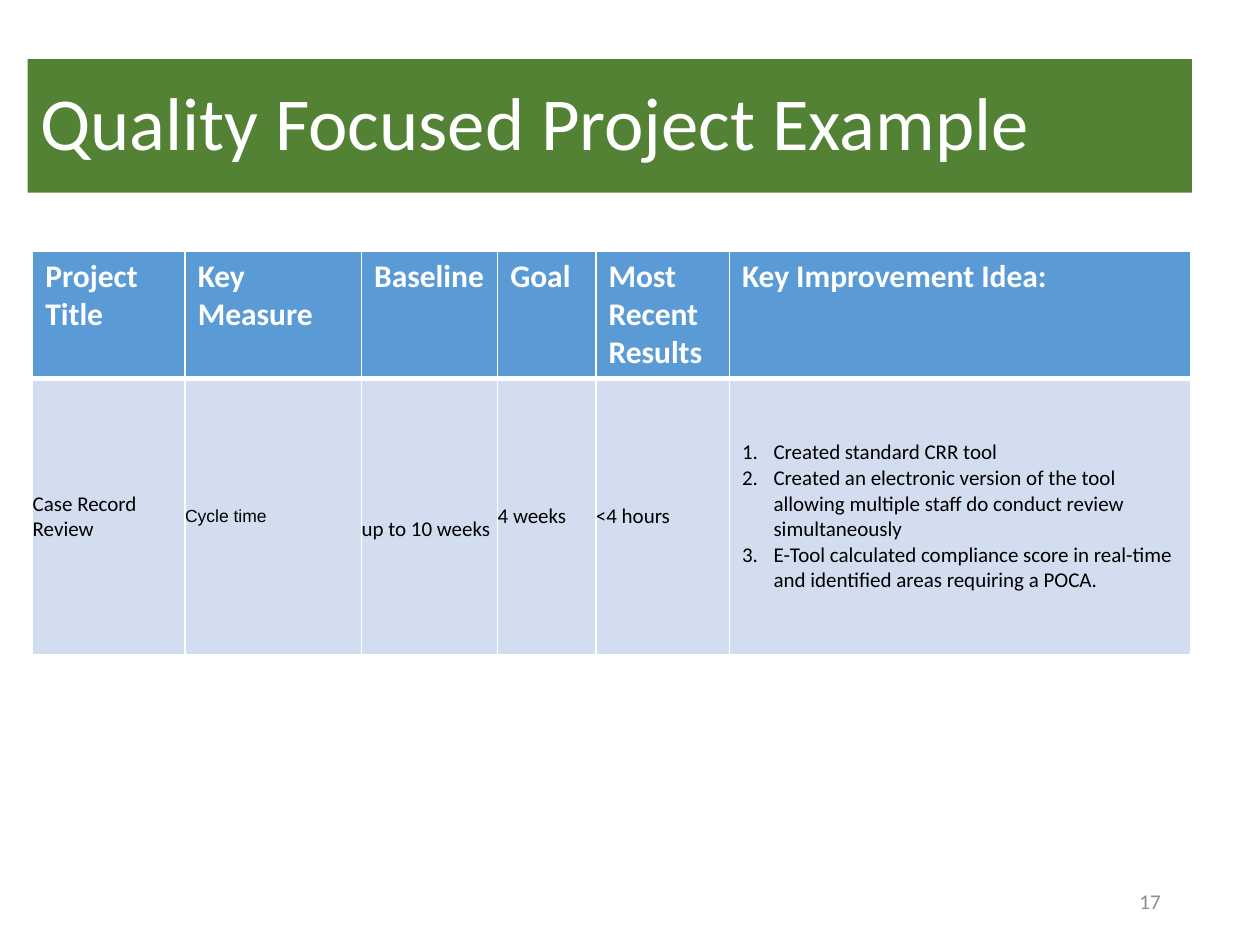
from lxml.etree import SubElement
from pptx import Presentation
from pptx.dml.color import RGBColor
from pptx.enum.text import MSO_ANCHOR, MSO_AUTO_SIZE, PP_ALIGN
from pptx.oxml.ns import qn
from pptx.util import Inches, Pt

GREEN = RGBColor(0x54, 0x82, 0x35)
BLUE = RGBColor(0x5B, 0x9B, 0xD5)
PALE_BLUE = RGBColor(0xD2, 0xDE, 0xEF)
GRAY = RGBColor(0x8C, 0x8C, 0x8C)
WHITE = RGBColor(0xFF, 0xFF, 0xFF)
BLACK = RGBColor(0, 0, 0)

COLUMN_WIDTHS = [1.21, 1.4, 1.08, 0.78, 1.06, 3.66]
ROW_HEIGHTS = [1, 2.19]
HEADERS = ["Project Title", "Key Measure", "Baseline", "Goal",
           "Most Recent Results", "Key Improvement Idea:"]
IDEAS = [
    "Created standard CRR tool",
    "Created an electronic version of the tool allowing multiple staff do conduct review simultaneously",
    "E-Tool calculated compliance score in real-time and identified areas requiring a POCA.",
]
PROJECT = ["Case Record Review", "Cycle time", "up to 10 weeks", "4 weeks",
           "<4 hours", "\n".join(IDEAS)]


def format_text(frame, size, color, bold=False, font="Calibri"):
    for para in frame.paragraphs:
        for span in para.runs:
            span.font.name = font
            span.font.size = Pt(size)
            span.font.bold = bold
            span.font.color.rgb = color


def add_border(cell, side, width):
    line = SubElement(cell._tc.get_or_add_tcPr(), qn(f"a:ln{side}"), w=str(Pt(width)))
    fill = SubElement(line, qn("a:solidFill"))
    SubElement(fill, qn("a:srgbClr"), val=str(WHITE))


deck = Presentation()
deck.slide_width, deck.slide_height = Inches(10), Inches(7.5)
page = deck.slides.add_slide(deck.slide_layouts[5])

title = page.shapes.title
title.left, title.top = Inches(0.22), Inches(0.47)
title.width, title.height = Inches(9.24), Inches(1.06)
title.fill.solid()
title.fill.fore_color.rgb = GREEN
title.text_frame.text = "Quality Focused Project Example"
title.text_frame.auto_size = MSO_AUTO_SIZE.NONE
title.text_frame.vertical_anchor = MSO_ANCHOR.MIDDLE
title.text_frame.paragraphs[0].alignment = PP_ALIGN.LEFT
title.text_frame.paragraphs[0].line_spacing = 0.9
format_text(title.text_frame, 42.7, WHITE)

table = page.shapes.add_table(
    len(ROW_HEIGHTS), len(COLUMN_WIDTHS), Inches(0.26), Inches(1.99),
    Inches(sum(COLUMN_WIDTHS)), Inches(sum(ROW_HEIGHTS))).table
for column, width in zip(table.columns, COLUMN_WIDTHS):
    column.width = Inches(width)
for row, height in zip(table.rows, ROW_HEIGHTS):
    row.height = Inches(height)

for row_index, texts in enumerate([HEADERS, PROJECT]):
    is_header = row_index == 0
    for column_index, text in enumerate(texts):
        cell = table.cell(row_index, column_index)
        cell.text_frame.text = text
        for side in "LRTB":
            add_border(cell, side, 3 if side == ("B" if is_header else "T") else 1)
        cell.fill.solid()
        cell.fill.fore_color.rgb = BLUE if is_header else PALE_BLUE
        if is_header:
            format_text(cell.text_frame, 18, WHITE, bold=True)
            continue
        cell.vertical_anchor = MSO_ANCHOR.MIDDLE
        format_text(cell.text_frame, 12, BLACK)
        if column_index < len(texts) - 1:
            cell.margin_left = cell.margin_right = 0
            cell.margin_top = cell.margin_bottom = 0

format_text(table.cell(1, 1).text_frame, 10, BLACK, font="Arial")
table.cell(1, 2).margin_top = Inches(0.2)
for para in table.cell(1, 5).text_frame.paragraphs:
    properties = para._p.get_or_add_pPr()
    properties.set("marL", str(Inches(0.25)))
    properties.set("indent", str(-Inches(0.25)))
    SubElement(properties, qn("a:buFont"), typeface="+mj-lt")
    SubElement(properties, qn("a:buAutoNum"), type="arabicPeriod")

number = page.shapes.add_textbox(Inches(7.06), Inches(6.95), Inches(2.25), Inches(0.4))
number.text_frame.word_wrap = True
number.text_frame.vertical_anchor = MSO_ANCHOR.MIDDLE
number.text_frame.text = "17"
number.text_frame.paragraphs[0].alignment = PP_ALIGN.RIGHT
format_text(number.text_frame, 12, GRAY)

deck.save("out.pptx")
